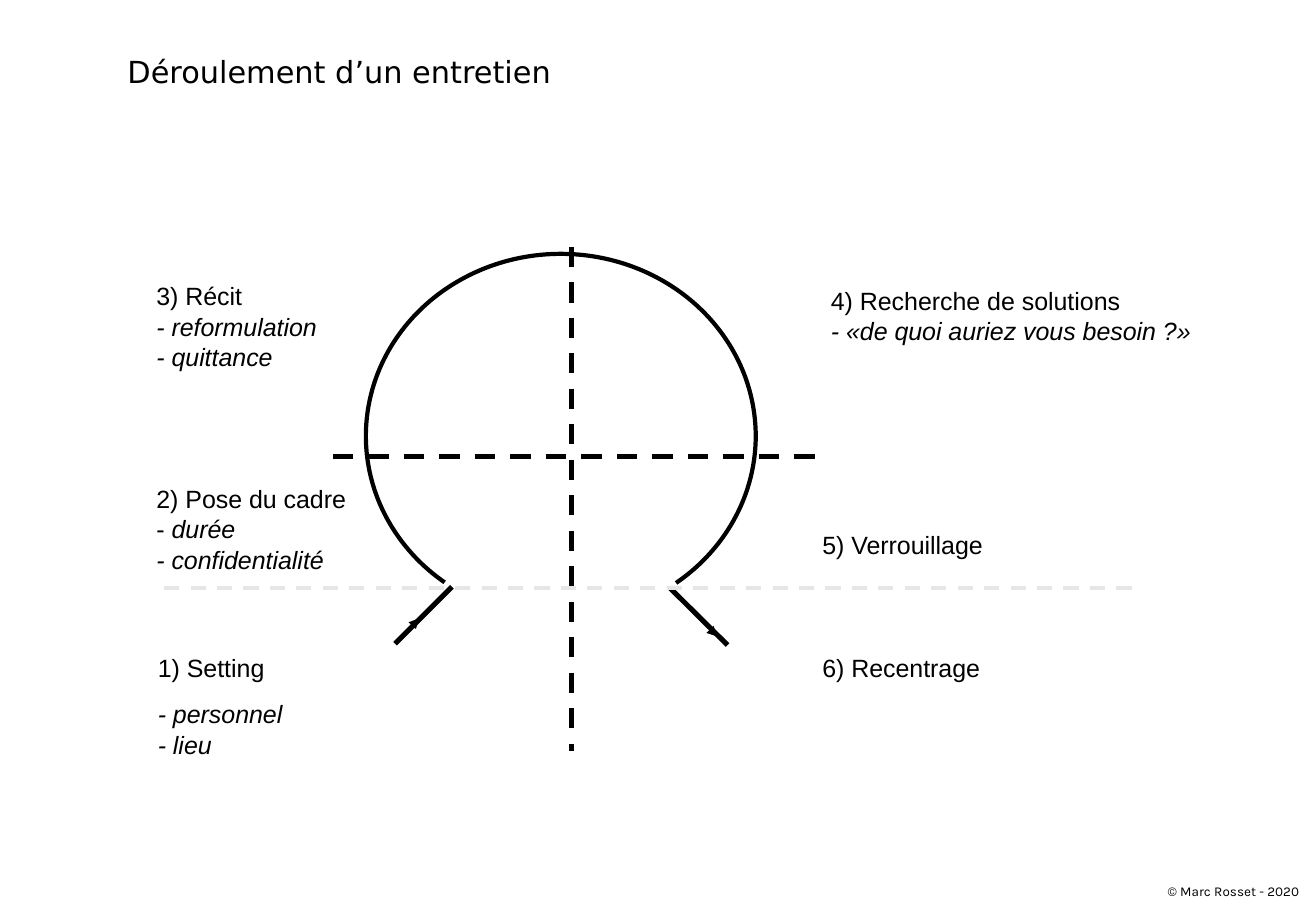
from dataclasses import dataclass

from lxml.etree import SubElement
from pptx import Presentation
from pptx.dml.color import RGBColor
from pptx.enum.dml import MSO_LINE_DASH_STYLE as Dash
from pptx.enum.shapes import MSO_CONNECTOR_TYPE as Connector, MSO_SHAPE as Shape
from pptx.enum.text import MSO_ANCHOR as Anchor, MSO_AUTO_SIZE as AutoSize, PP_ALIGN as Align
from pptx.oxml.ns import qn
from pptx.util import Cm, Pt

BLACK = "000000"
GREY = "E7E6E6"

STAGES = [
    (0.03, 8.35, 4, [[("1) Setting", False)], [("- personnel", True)], [("- lieu", True)]], 9.5),
    (0, 4.82, 5.2, [[("2) Pose du cadre", False)], [("- ", False), ("durée", True)],
                    [("- confidentialité", True)]], 0),
    (0, 0.58, 4.5, [[("3) Récit", False)], [("- reformulation", True)], [("- quittance", True)]], 0),
    (14.1, 0.68, 9, [[("4) Recherche de solutions", False)],
                     [("- «de quoi auriez vous besoin ?»", True)]], 0),
    (13.92, 5.79, 4.5, [[("5) Verrouillage", False)]], 0),
    (13.92, 8.35, 4.5, [[("6) Recentrage", False)]], 0),
]


@dataclass
class Box:
    """A region of the page, in centimetres."""
    left: float
    top: float
    width: float
    height: float

    def lengths(self):
        """Return the four sides as slide lengths."""
        return Cm(self.left), Cm(self.top), Cm(self.width), Cm(self.height)


def colour(value):
    """Turn a hex string into a colour."""
    return RGBColor.from_string(value)


def add_span(para, text, font, size, italic=False):
    """Append one formatted run to a paragraph."""
    span = para.add_run()
    span.text = text
    span.font.name = font
    span.font.size = Pt(size)
    span.font.italic = italic
    span.font.color.rgb = colour(BLACK)


def add_line(page, box, ends, weight, ink=BLACK, dashed=False, arrow=False):
    """Draw a line whose ends are measured from the corner of the box."""
    x1, y1, x2, y2 = ends
    line = page.shapes.add_connector(
        Connector.STRAIGHT, Cm(box.left + x1), Cm(box.top + y1), Cm(box.left + x2), Cm(box.top + y2))
    line.line.color.rgb = colour(ink)
    line.line.width = Pt(weight)
    if dashed:
        line.line.dash_style = Dash.DASH
    if arrow:
        SubElement(line.line._get_or_add_ln(), qn("a:tailEnd"), type="triangle")
    SubElement(line._element.spPr, qn("a:effectLst"))


def add_title(page, box):
    """Fill and place the title."""
    title = page.shapes.title
    title.left, title.top, title.width, title.height = box.lengths()
    frame = title.text_frame
    frame.auto_size = AutoSize.NONE
    frame.vertical_anchor = Anchor.TOP
    para = frame.paragraphs[0]
    para.alignment = Align.LEFT
    add_span(para, "Déroulement d’un entretien", "DejaVu Sans", 18)


def add_footer(page, box):
    """Write the author and the year."""
    frame = page.shapes.add_textbox(*box.lengths()).text_frame
    frame.word_wrap = True
    add_span(frame.paragraphs[0], "© Marc Rosset - 2020", "Karla", 8)


def add_diagram(page, box):
    """Draw the axes, the arrows and the open loop of the interview."""
    add_line(page, box, (6.43, 7.11, 5.24, 8.3), 3)
    add_line(page, box, (10.98, 7.13, 12.19, 8.33), 3)
    add_line(page, box, (3.94, 4.39, 14.1, 4.39), 3, dashed=True)
    add_line(page, box, (8.92, 0, 8.92, box.height), 3, dashed=True)
    add_line(page, box, (0.41, 7.13, box.width, 7.13), 2.25, GREY, dashed=True)
    add_line(page, box, (5.36, 8.18, 5.74, 7.77), 0.75, arrow=True)
    add_line(page, box, (11.56, 7.74, 11.97, 8.15), 0.75, arrow=True)
    loop_box = Box(box.left + 4.63, box.top + 0.15, 8.15, 7.62)
    loop = page.shapes.add_shape(Shape.ARC, *loop_box.lengths())
    loop.shadow.inherit = False
    loop.adjustments[0] = 77.06
    loop.adjustments[1] = 31.13
    loop.fill.background()
    loop.line.color.rgb = colour(BLACK)
    loop.line.width = Pt(2.5)


def add_stages(page, box):
    """Write the six stages around the loop."""
    for left, top, width, lines, gap in STAGES:
        place = Box(box.left + left, box.top + top, width, 0.25 + 0.64 * len(lines))
        frame = page.shapes.add_textbox(*place.lengths()).text_frame
        frame.word_wrap = True
        for index, spans in enumerate(lines):
            para = frame.add_paragraph() if index else frame.paragraphs[0]
            para.line_spacing = Pt(18)
            para.space_after = Pt(0 if index else gap)
            for text, italic in spans:
                add_span(para, text, "Arial", 14.8, italic)


def main():
    """Build the deck and save it."""
    deck = Presentation()
    deck.slide_width, deck.slide_height = Cm(27.51), Cm(19.05)
    page = deck.slides.add_slide(deck.slide_layouts[5])
    region = Box(3.02, 5.16, 20.7, 10.54)
    add_footer(page, Box(24.16, 18.34, 3.35, 0.61))
    add_diagram(page, region)
    add_stages(page, region)
    add_title(page, Box(2.41, 0.99, 12, 1.02))
    deck.save("out.pptx")


if __name__ == "__main__":
    main()
